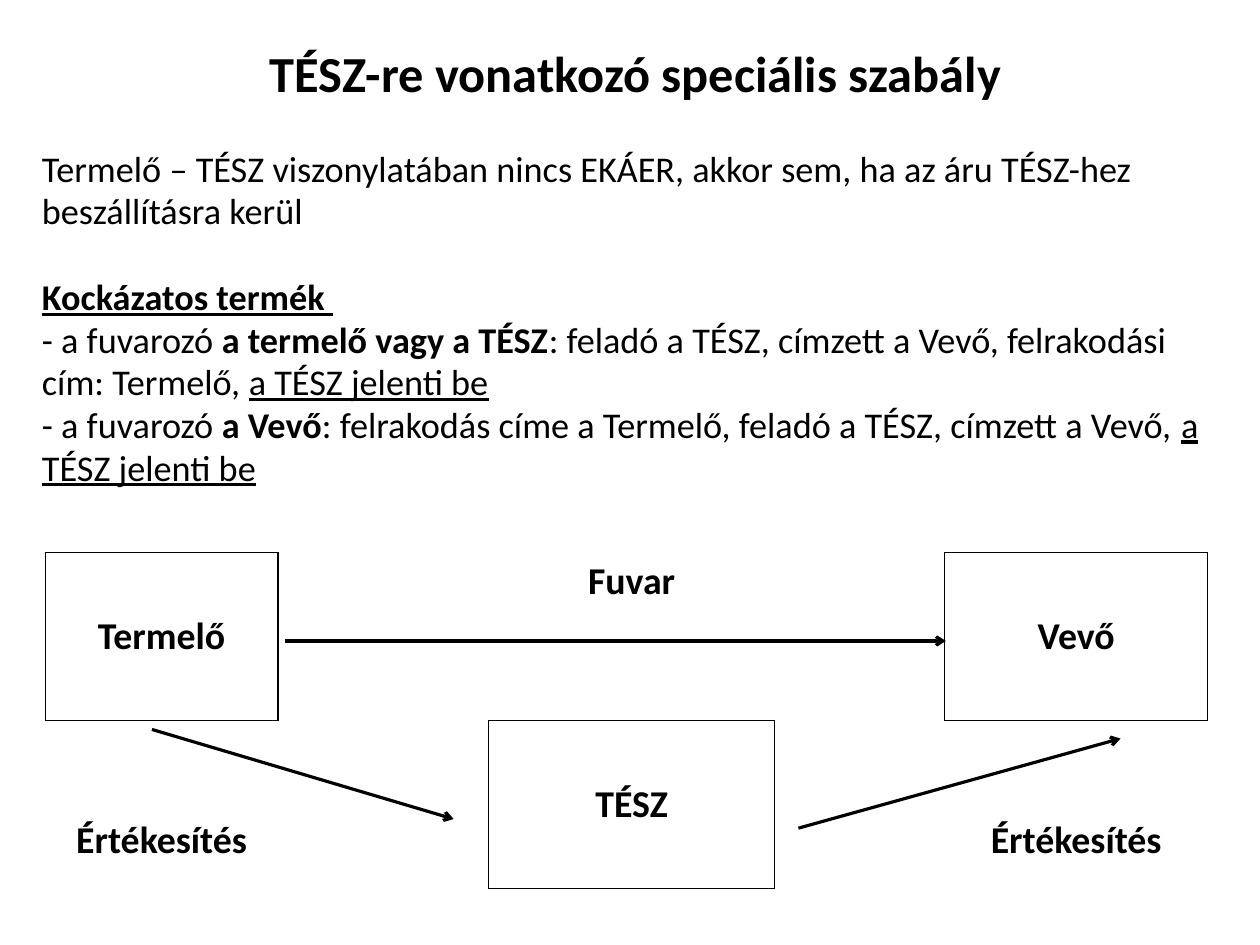
from dataclasses import dataclass

from lxml.etree import SubElement
from pptx import Presentation
from pptx.dml.color import RGBColor
from pptx.enum.shapes import MSO_CONNECTOR
from pptx.enum.text import MSO_ANCHOR, PP_ALIGN
from pptx.oxml.ns import qn
from pptx.slide import Slide
from pptx.table import _Cell
from pptx.text.text import _Paragraph
from pptx.util import Emu, Pt

EMU_PER_PX = 9144
FONT = "Calibri"
COLORS = {"ink": "000000", "paper": "FFFFFF"}
BODY_SIZE = 23
LABEL_SIZE = 24
BLANK_LINE = 27.5
COLUMN_WIDTHS = (205, 186, 252, 150, 232)
ROW_HEIGHT = 148


@dataclass(frozen=True)
class Span:
    text: str
    bold: bool = False
    underline: bool = False


@dataclass(frozen=True)
class Passage:
    spans: tuple[Span, ...]
    size: int = BODY_SIZE
    align: PP_ALIGN = PP_ALIGN.LEFT
    gap_before: float = 0


@dataclass(frozen=True)
class Label:
    row: int
    column: int
    text: str
    boxed: bool = False
    top_margin: int = 5


@dataclass(frozen=True)
class Arrow:
    start: tuple[int, int]
    end: tuple[int, int]


REPORTER = Span("a TÉSZ jelenti be", underline=True)

PASSAGES = (
    Passage((Span("TÉSZ-re vonatkozó speciális szabály", bold=True),), 32, PP_ALIGN.CENTER),
    Passage((Span("Termelő – TÉSZ viszonylatában nincs EKÁER, akkor sem, ha az áru "
                  "TÉSZ-hez beszállításra kerül"),), gap_before=BLANK_LINE),
    Passage((Span("Kockázatos termék ", bold=True, underline=True),), gap_before=BLANK_LINE),
    Passage((Span("- a fuvarozó "), Span("a termelő vagy a TÉSZ", bold=True),
             Span(": feladó a TÉSZ, címzett a Vevő, felrakodási cím: Termelő, "), REPORTER)),
    Passage((Span("- a fuvarozó "), Span("a Vevő", bold=True),
             Span(": felrakodás címe a Termelő, feladó a TÉSZ, címzett a Vevő, "), REPORTER)),
)

LABELS = (
    Label(0, 0, "Termelő", boxed=True),
    Label(0, 2, "Fuvar"),
    Label(0, 4, "Vevő", boxed=True),
    Label(1, 0, "Értékesítés", top_margin=86),
    Label(1, 2, "TÉSZ", boxed=True),
    Label(1, 4, "Értékesítés", top_margin=86),
)

ARROWS = (
    Arrow((251, 565), (834, 565)),
    Arrow((134, 643), (400, 722)),
    Arrow((704, 730), (988, 651)),
)


def px(length: int) -> Emu:
    return Emu(length * EMU_PER_PX)


def color(name: str) -> RGBColor:
    return RGBColor.from_string(COLORS[name])


def add_span(paragraph: _Paragraph, span: Span, size: int) -> None:
    run = paragraph.add_run()
    run.text = span.text
    run.font.name = FONT
    run.font.size = Pt(size)
    run.font.bold = span.bold
    run.font.underline = span.underline
    run.font.color.rgb = color("ink")


def add_rules(slide: Slide) -> None:
    frame = slide.shapes.add_textbox(px(31), px(34), px(1059), px(438)).text_frame
    frame.word_wrap = True
    frame.margin_left = frame.margin_right = px(6)
    frame.margin_top = frame.margin_bottom = px(6)
    for index, passage in enumerate(PASSAGES):
        paragraph = frame.add_paragraph() if index else frame.paragraphs[0]
        paragraph.alignment = passage.align
        paragraph.line_spacing = 0.98
        paragraph.space_before = Pt(passage.gap_before)
        for span in passage.spans:
            add_span(paragraph, span, passage.size)


def draw_borders(cell: _Cell, row: int, column: int, boxes: set[tuple[int, int]]) -> None:
    neighbours = {
        "a:lnL": (row, column - 1),
        "a:lnR": (row, column + 1),
        "a:lnT": (row - 1, column),
        "a:lnB": (row + 1, column),
    }
    properties = cell._tc.get_or_add_tcPr()
    for side, neighbour in neighbours.items():
        border = SubElement(properties, qn(side), w=str(Pt(1)))
        if boxes & {(row, column), neighbour}:
            fill = SubElement(border, qn("a:solidFill"))
            SubElement(fill, qn("a:srgbClr"), val=COLORS["ink"])
        else:
            SubElement(border, qn("a:noFill"))


def add_trade_table(slide: Slide) -> None:
    table = slide.shapes.add_table(
        2, len(COLUMN_WIDTHS), px(40), px(487), px(sum(COLUMN_WIDTHS)), px(2 * ROW_HEIGHT)
    ).table
    table.first_row = table.horz_banding = False
    for column, width in zip(table.columns, COLUMN_WIDTHS):
        column.width = px(width)
    boxes = {(label.row, label.column) for label in LABELS if label.boxed}
    for row in range(2):
        for column in range(len(COLUMN_WIDTHS)):
            cell = table.cell(row, column)
            draw_borders(cell, row, column, boxes)
            cell.fill.solid()
            cell.fill.fore_color.rgb = color("paper")
    for label in LABELS:
        cell = table.cell(label.row, label.column)
        cell.margin_top = px(label.top_margin)
        cell.vertical_anchor = MSO_ANCHOR.MIDDLE if label.boxed else MSO_ANCHOR.TOP
        paragraph = cell.text_frame.paragraphs[0]
        paragraph.alignment = PP_ALIGN.CENTER
        add_span(paragraph, Span(label.text, bold=True), LABEL_SIZE)


def add_arrow(slide: Slide, arrow: Arrow) -> None:
    connector = slide.shapes.add_connector(
        MSO_CONNECTOR.STRAIGHT, *map(px, arrow.start + arrow.end)
    )
    connector.line.color.rgb = color("ink")
    connector.line.width = Pt(2)
    SubElement(connector.line._get_or_add_ln(), qn("a:tailEnd"), type="arrow")
    SubElement(connector._element.spPr, qn("a:effectLst"))


def main() -> None:
    presentation = Presentation()
    presentation.slide_width = px(1111)
    presentation.slide_height = px(833)
    slide = presentation.slides.add_slide(presentation.slide_layouts[6])
    slide.background.fill.solid()
    slide.background.fill.fore_color.rgb = color("paper")
    add_rules(slide)
    add_trade_table(slide)
    for arrow in ARROWS:
        add_arrow(slide, arrow)
    presentation.save("out.pptx")


if __name__ == "__main__":
    main()
